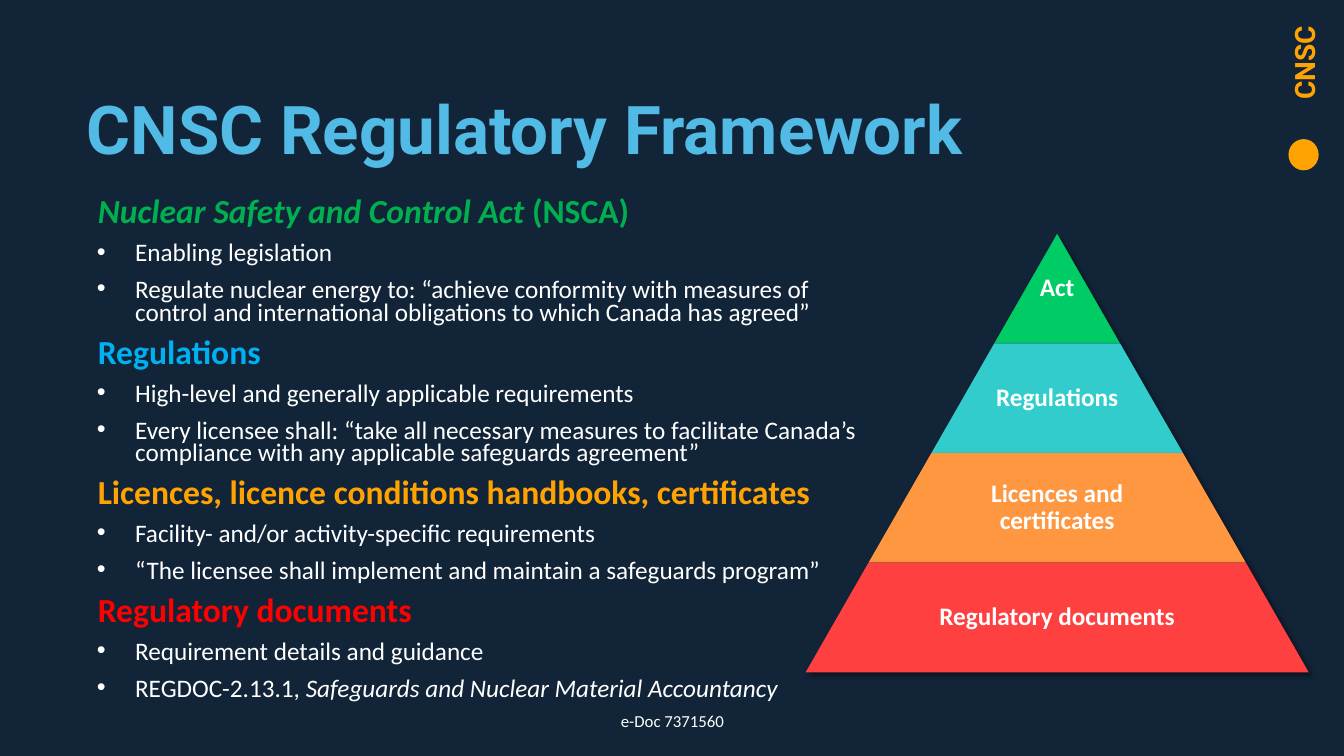
"""Builds the regulatory framework slide with a text outline and a four-tier pyramid."""
from lxml import etree
from pptx import Presentation
from pptx.dml.color import RGBColor
from pptx.enum.shapes import MSO_SHAPE
from pptx.enum.text import MSO_ANCHOR, MSO_AUTO_SIZE, PP_ALIGN
from pptx.oxml.ns import qn
from pptx.util import Inches, Pt

TRAPEZOID, OVAL = MSO_SHAPE.TRAPEZOID, MSO_SHAPE.OVAL
TOP, MIDDLE, BOTTOM = MSO_ANCHOR.TOP, MSO_ANCHOR.MIDDLE, MSO_ANCHOR.BOTTOM
LEFT, CENTER = PP_ALIGN.LEFT, PP_ALIGN.CENTER
NO_AUTOFIT = MSO_AUTO_SIZE.NONE

WIDTH, HEIGHT = Inches(13.33), Inches(7.5)
BODY_FONT, TITLE_FONT = "Calibri", "Roboto"
COLOURS = {
    "background": "122438", "title": "51BAE5", "text": "FFFFFF", "mark": "FFA302",
    "act": "00B050", "regulations": "00B0F0", "licences": "FFA302", "documents": "FF0000",
    "act tier": "00CC66", "regulations tier": "33CCCC",
    "licences tier": "FF9640", "documents tier": "FF4040", "shadow": "000000",
}
SECTIONS = [
    ("act", ("Nuclear Safety and Control Act ", "(NSCA)"), [
        ("Enabling legislation",),
        ("Regulate nuclear energy to: “achieve conformity with measures of control and "
         "international obligations to which Canada has agreed”",)]),
    ("regulations", ("Regulations",), [
        ("High-level and generally applicable requirements",),
        ("Every licensee shall: “take all necessary measures to facilitate Canada’s "
         "compliance with any applicable safeguards agreement”",)]),
    ("licences", ("Licences, licence conditions handbooks, certificates",), [
        ("Facility- and/or activity-specific requirements",),
        ("“The licensee shall implement and maintain a safeguards program”",)]),
    ("documents", ("Regulatory documents",), [
        ("Requirement details and guidance",),
        ("REGDOC-2.13.1, ", "Safeguards and Nuclear Material Accountancy")]),
]
ITALIC_PARTS = {"Nuclear Safety and Control Act ", "Safeguards and Nuclear Material Accountancy"}
TIERS = [("Act", "act tier"), ("Regulations", "regulations tier"),
         ("Licences and certificates", "licences tier"),
         ("Regulatory documents", "documents tier")]
PYRAMID_CENTRE, PYRAMID_TOP, PYRAMID_WIDTH, TIER_HEIGHT = 78.66, 30.93, 37.43, 14.5
LABEL_SHARE = 0.65


def colour(name):
    """Return the named colour."""
    return RGBColor.from_string(COLOURS[name])


def area(left, top, width, height):
    """Turn percentages of the slide into lengths."""
    return (int(WIDTH * left / 100), int(HEIGHT * top / 100),
            int(WIDTH * width / 100), int(HEIGHT * height / 100))


def place(shape, box):
    """Move a placeholder to a box."""
    shape.left, shape.top, shape.width, shape.height = box


def format_paragraph(paragraph, size, colour_name, font=BODY_FONT, bold=False):
    """Format every run of a paragraph."""
    for run in paragraph.runs:
        run.font.name, run.font.size, run.font.bold = font, Pt(size), bold
        run.font.italic = run.text in ITALIC_PARTS
        run.font.color.rgb = colour(colour_name)


def set_text(shape, text, size, colour_name, font=BODY_FONT, bold=False,
             align=LEFT, anchor=TOP, spacing=1.0, wrap=True):
    """Write one formatted paragraph into a shape."""
    frame = shape.text_frame
    frame.text = text
    frame.word_wrap, frame.auto_size, frame.vertical_anchor = wrap, NO_AUTOFIT, anchor
    paragraph = frame.paragraphs[0]
    paragraph.alignment, paragraph.line_spacing = align, spacing
    format_paragraph(paragraph, size, colour_name, font, bold)


def add_plain_shape(slide, kind, box, colour_name):
    """Add a filled shape without outline or shadow."""
    shape = slide.shapes.add_shape(kind, *box)
    shape.shadow.inherit = False
    shape.fill.solid()
    shape.fill.fore_color.rgb = colour(colour_name)
    shape.line.fill.background()
    return shape


def add_shadow(shape):
    """Give a shape a soft shadow to the lower right."""
    effects = shape._element.spPr.find(qn("a:effectLst"))
    shadow = etree.SubElement(effects, qn("a:outerShdw"), blurRad=str(Pt(4)),
                              dist=str(Pt(3)), dir="2700000", rotWithShape="0")
    tint = etree.SubElement(shadow, qn("a:srgbClr"), val=COLOURS["shadow"])
    etree.SubElement(tint, qn("a:alpha"), val="46000")


def set_indent(paragraph, margin, indent, bullet=None):
    """Set the margin, hanging indent and bullet of a paragraph."""
    properties = paragraph._p.get_or_add_pPr()
    properties.set("marL", str(Inches(margin)))
    properties.set("indent", str(Inches(indent)))
    if bullet:
        etree.SubElement(properties, qn("a:buChar"), char=bullet)
    else:
        etree.SubElement(properties, qn("a:buNone"))


def add_outline(body):
    """Fill the body with coloured headings and their bullets."""
    frame = body.text_frame
    frame.word_wrap, frame.auto_size, frame.vertical_anchor = True, NO_AUTOFIT, TOP
    lines = []
    for name, heading, points in SECTIONS:
        lines.append((heading, name, True))
        lines += [(point, "text", False) for point in points]
    for index, (parts, colour_name, is_heading) in enumerate(lines):
        paragraph = frame.add_paragraph() if index else frame.paragraphs[0]
        paragraph.text = parts[0]
        for part in parts[1:]:
            paragraph.add_run().text = part
        if is_heading:
            set_indent(paragraph, 0.25, 0)
        else:
            set_indent(paragraph, 0.62, -0.38, "•")
        paragraph.alignment, paragraph.line_spacing = LEFT, 0.75
        paragraph.space_before = Pt(10 if index else 0)
        format_paragraph(paragraph, 24 if is_heading else 18, colour_name, bold=is_heading)


def add_tier(slide, index, label, colour_name):
    """Add one pyramid tier and its label."""
    width = PYRAMID_WIDTH * (index + 1) / len(TIERS)
    top = PYRAMID_TOP + index * TIER_HEIGHT
    tier = add_plain_shape(
        slide, TRAPEZOID, area(PYRAMID_CENTRE - width / 2, top, width, TIER_HEIGHT), colour_name)
    tier.adjustments[0] = WIDTH * PYRAMID_WIDTH / (2 * len(TIERS)) / (HEIGHT * TIER_HEIGHT)
    add_shadow(tier)
    label_width = width * LABEL_SHARE if index else width
    box = slide.shapes.add_textbox(
        *area(PYRAMID_CENTRE - label_width / 2, top, label_width, TIER_HEIGHT))
    frame = box.text_frame
    frame.margin_left = frame.margin_right = Inches(0.03)
    frame.margin_top = frame.margin_bottom = Inches(0.03)
    set_text(box, label, 18, "text", bold=True, align=CENTER, anchor=MIDDLE, spacing=0.9)


def add_side_mark(slide):
    """Add the upright agency name with a plain dot below it."""
    name = slide.shapes.add_textbox(*area(93.55, 5.33, 6.98, 5.87))
    name.rotation = 270
    set_text(name, "CNSC", 20, "mark", TITLE_FONT, bold=True, wrap=False)
    add_plain_shape(slide, OVAL, area(95.87, 18.4, 2.25, 4.13), "mark")


def main():
    """Build and save the slide."""
    presentation = Presentation()
    presentation.slide_width, presentation.slide_height = WIDTH, HEIGHT
    slide = presentation.slides.add_slide(presentation.slide_layouts[1])
    slide.background.fill.solid()
    slide.background.fill.fore_color.rgb = colour("background")
    add_side_mark(slide)
    title, body = slide.shapes.title, slide.placeholders[1]
    place(title, area(5.7, 7.6, 87.02, 15.47))
    set_text(title, "CNSC Regulatory Framework", 48, "title", TITLE_FONT, bold=True,
             anchor=BOTTOM, spacing=0.9)
    place(body, area(4.65, 25.73, 60.99, 72.27))
    add_outline(body)
    document_number = slide.shapes.add_textbox(*area(33.16, 92.67, 33.76, 5.33))
    set_text(document_number, "e-Doc 7371560", 12, "text", align=CENTER, anchor=MIDDLE)
    for index, (label, colour_name) in enumerate(TIERS):
        add_tier(slide, index, label, colour_name)
    presentation.save("out.pptx")


if __name__ == "__main__":
    main()
